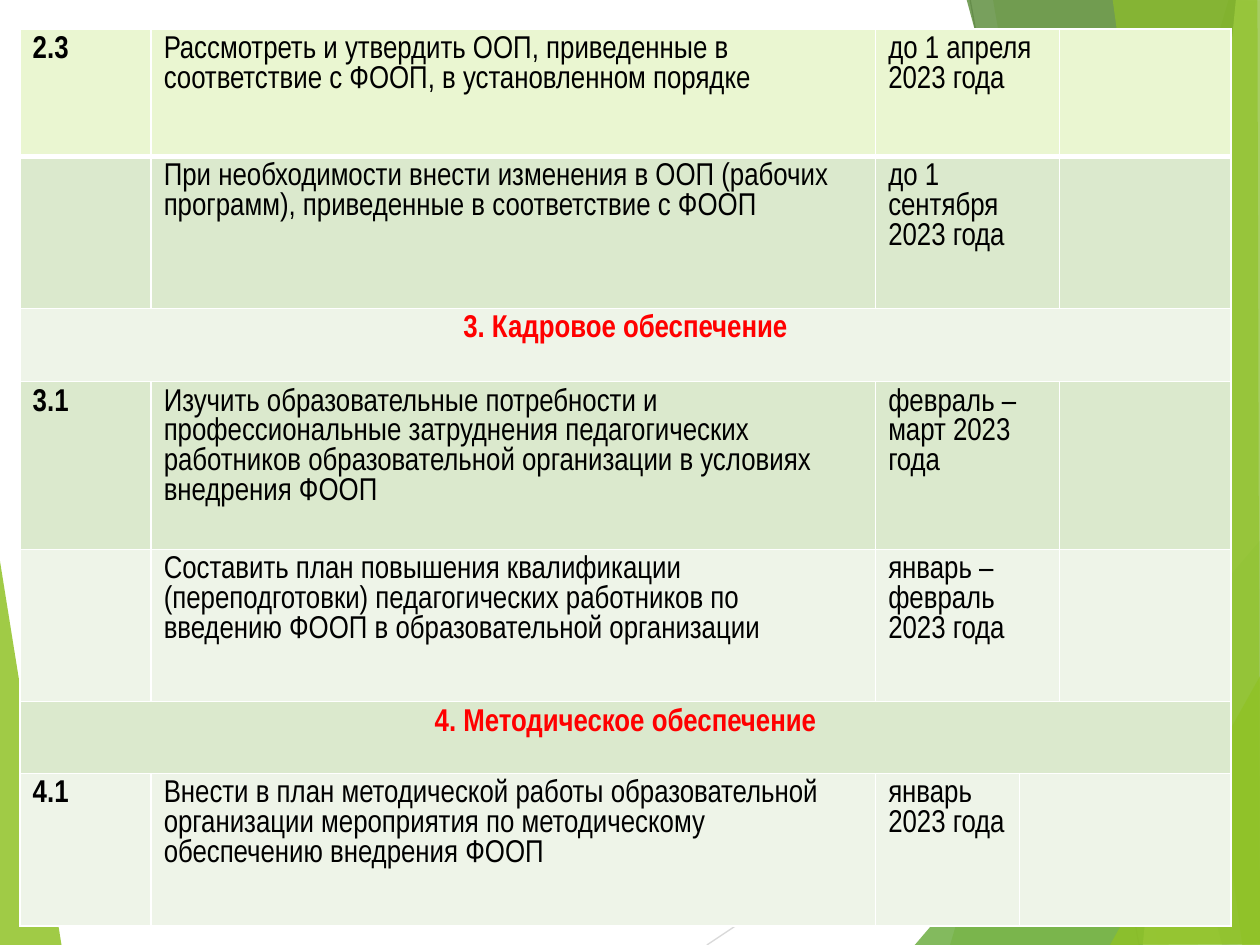
from dataclasses import dataclass

from lxml import etree
from pptx import Presentation
from pptx.dml.color import RGBColor
from pptx.enum.shapes import MSO_CONNECTOR
from pptx.enum.text import PP_ALIGN
from pptx.oxml.ns import qn
from pptx.util import Emu, Pt

PX = 9144
STRAIGHT = MSO_CONNECTOR.STRAIGHT
LEFT = PP_ALIGN.LEFT
CENTER = PP_ALIGN.CENTER

BLACK = RGBColor(0x00, 0x00, 0x00)
WHITE = RGBColor(0xFF, 0xFF, 0xFF)
RED = RGBColor(0xFF, 0x00, 0x00)
LIME = RGBColor(0x90, 0xC2, 0x26)
GREEN = RGBColor(0x54, 0xA0, 0x21)
DARK_GREEN = RGBColor(0x3F, 0x78, 0x19)
PALE_LIME = RGBColor(0xC0, 0xE4, 0x74)
HEADER_FILL = RGBColor(0xEA, 0xF6, 0xD1)
DARK_BAND = RGBColor(0xDB, 0xE9, 0xCD)
LIGHT_BAND = RGBColor(0xEE, 0xF4, 0xE8)
LIGHT_GRAY = RGBColor(0xD9, 0xD9, 0xD9)
GRAY = RGBColor(0xBF, 0xBF, 0xBF)

FONT_NAME = "Arial Narrow"
FONT_SIZE = Pt(18)
LINE_SPACING = Pt(17)
THIN_BORDER = Pt(1)
THICK_BORDER = Pt(3)


@dataclass(frozen=True)
class Facet:
    points: tuple
    color: RGBColor
    opacity: int


@dataclass(frozen=True)
class Ray:
    start: tuple
    end: tuple
    color: RGBColor


@dataclass(frozen=True)
class PlanRow:
    height: int
    fill: RGBColor
    number: str = ""
    task: str = ""
    deadline: str = ""
    section: str = ""
    deadline_columns: int = 2


LEFT_FACET = Facet(((-1, 439), (49, 751), (-1, 750)), LIME, 85)
RAYS = (
    Ray((561, 750), (1001, 457), LIGHT_GRAY),
    Ray((770, 0), (904, 750), GRAY),
)
RIGHT_FACETS = (
    Facet(((975, 0), (754, 750), (1002, 751), (1001, 1)), LIME, 30),
    Facet(((788, -1), (919, 750), (1001, 750), (1001, -1)), LIME, 20),
    Facet(((726, 750), (1000, 429), (1001, 750)), GREEN, 72),
    Facet(((767, -1), (970, 750), (1001, 749), (1001, -1)), DARK_GREEN, 70),
    Facet(((981, -1), (907, 750), (1001, 750), (1000, -1)), PALE_LIME, 70),
    Facet(((883, -1), (986, 750), (1000, 750), (998, -1)), LIME, 65),
    Facet(((881, 750), (1001, 535), (1001, 749)), LIME, 80),
)

TABLE_LEFT, TABLE_TOP = 16, 23
COLUMN_WIDTHS = (104, 575, 114, 32, 136)
PLAN_ROWS = (
    PlanRow(101, HEADER_FILL, "2.3",
            "Рассмотреть и утвердить ООП, приведенные в соответствие с ФООП, "
            "в установленном порядке",
            "до 1 апреля\n2023 года"),
    PlanRow(121, DARK_BAND, "",
            "При необходимости внести изменения в ООП (рабочих программ), "
            "приведенные в соответствие с ФООП",
            "до 1 сентября 2023 года"),
    PlanRow(58, LIGHT_BAND, section="3. Кадровое обеспечение"),
    PlanRow(133, DARK_BAND, "3.1",
            "Изучить образовательные потребности и профессиональные затруднения "
            "педагогических работников образовательной организации в условиях "
            "внедрения ФООП",
            "февраль – март 2023 года"),
    PlanRow(121, LIGHT_BAND, "",
            "Составить план повышения квалификации (переподготовки) педагогических "
            "работников по введению ФООП в образовательной организации",
            "январь – февраль 2023 года"),
    PlanRow(57, DARK_BAND, section="4. Методическое обеспечение"),
    PlanRow(121, LIGHT_BAND, "4.1",
            "Внести в план методической работы образовательной организации "
            "мероприятия по методическому обеспечению внедрения ФООП",
            "январь 2023 года", deadline_columns=1),
)


def px(length: int) -> Emu:
    return Emu(length * PX)


def draw_facet(slide, facet: Facet) -> None:
    builder = slide.shapes.build_freeform(*facet.points[0], scale=PX)
    builder.add_line_segments(facet.points[1:], close=True)
    shape = builder.convert_to_shape()
    shape.shadow.inherit = False
    shape.line.fill.background()
    shape.fill.solid()
    shape.fill.fore_color.rgb = facet.color
    color = shape.element.spPr.find(qn("a:solidFill"))[0]
    etree.SubElement(color, qn("a:alpha"), val=str(facet.opacity * 1000))


def draw_ray(slide, ray: Ray) -> None:
    ends = [px(length) for length in ray.start + ray.end]
    connector = slide.shapes.add_connector(STRAIGHT, *ends)
    connector.line.color.rgb = ray.color
    connector.line.width = Pt(0.75)
    etree.SubElement(connector.element.spPr, qn("a:effectLst"))


def set_borders(cell, top: int, bottom: int) -> None:
    properties = cell._tc.get_or_add_tcPr()
    widths = {"L": THIN_BORDER, "R": THIN_BORDER, "T": top, "B": bottom}
    for side, width in widths.items():
        border = etree.SubElement(properties, qn(f"a:ln{side}"), w=str(int(width)))
        fill = etree.SubElement(border, qn("a:solidFill"))
        etree.SubElement(fill, qn("a:srgbClr"), val=str(WHITE))


def write_cell(cell, text: str, bold: bool = False,
               color: RGBColor = BLACK, alignment: PP_ALIGN = LEFT) -> None:
    cell.text = text
    for paragraph in cell.text_frame.paragraphs:
        paragraph.alignment = alignment
        paragraph.line_spacing = LINE_SPACING
        paragraph.font.name = FONT_NAME
        paragraph.font.size = FONT_SIZE
        paragraph.font.bold = bold
        paragraph.font.color.rgb = color


def fill_row(table, index: int, plan_row: PlanRow) -> None:
    table.rows[index].height = px(plan_row.height)
    cells = [table.cell(index, column) for column in range(len(COLUMN_WIDTHS))]
    for cell in cells:
        set_borders(cell,
                    top=THICK_BORDER if index == 1 else THIN_BORDER,
                    bottom=THICK_BORDER if index == 0 else THIN_BORDER)
        cell.fill.solid()
        cell.fill.fore_color.rgb = plan_row.fill
    if plan_row.section:
        cells[0].merge(cells[-1])
        write_cell(cells[0], plan_row.section, True, RED, CENTER)
        return
    if plan_row.deadline_columns == 2:
        cells[2].merge(cells[3])
    else:
        cells[3].merge(cells[4])
    write_cell(cells[0], plan_row.number, bold=True)
    write_cell(cells[1], plan_row.task)
    write_cell(cells[2], plan_row.deadline)


def draw_plan(slide) -> None:
    height = sum(plan_row.height for plan_row in PLAN_ROWS)
    frame = slide.shapes.add_table(
        len(PLAN_ROWS), len(COLUMN_WIDTHS), px(TABLE_LEFT), px(TABLE_TOP),
        px(sum(COLUMN_WIDTHS)), px(height))
    table = frame.table
    for column, width in zip(table.columns, COLUMN_WIDTHS):
        column.width = px(width)
    for index, plan_row in enumerate(PLAN_ROWS):
        fill_row(table, index, plan_row)


def main() -> None:
    presentation = Presentation()
    presentation.slide_width = px(1000)
    presentation.slide_height = px(750)
    slide = presentation.slides.add_slide(presentation.slide_layouts[6])
    draw_facet(slide, LEFT_FACET)
    for ray in RAYS:
        draw_ray(slide, ray)
    for facet in RIGHT_FACETS:
        draw_facet(slide, facet)
    draw_plan(slide)
    presentation.save("out.pptx")


if __name__ == "__main__":
    main()
